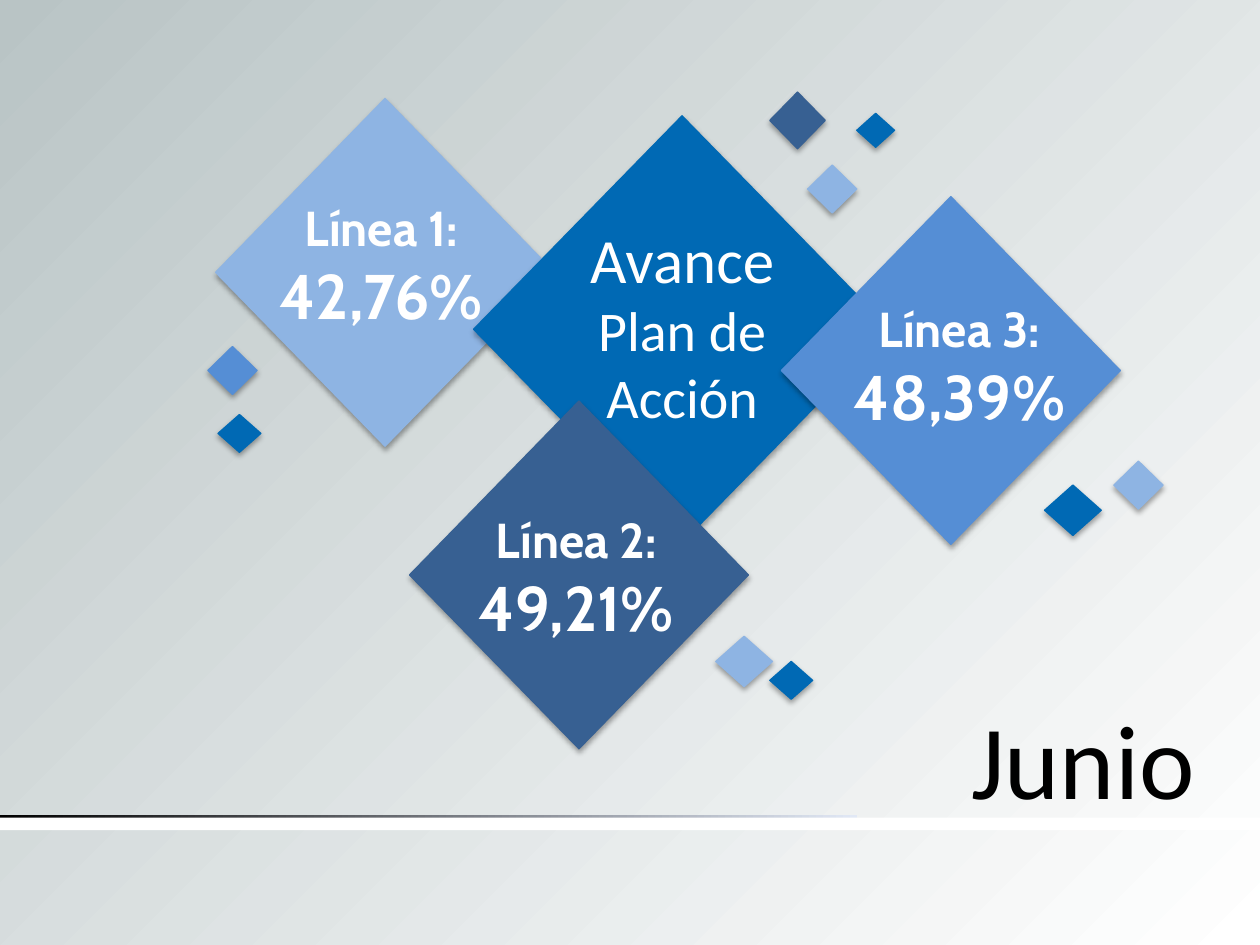
from dataclasses import dataclass

from lxml import etree
from pptx import Presentation
from pptx.dml.color import RGBColor
from pptx.enum.shapes import MSO_SHAPE
from pptx.enum.text import MSO_ANCHOR, MSO_AUTO_SIZE, PP_ALIGN
from pptx.oxml import parse_xml
from pptx.oxml.ns import nsdecls, qn
from pptx.util import Pt

DIAMOND, RECTANGLE = MSO_SHAPE.DIAMOND, MSO_SHAPE.RECTANGLE
CENTER = PP_ALIGN.CENTER
TOP, MIDDLE = MSO_ANCHOR.TOP, MSO_ANCHOR.MIDDLE
NO_FIT = MSO_AUTO_SIZE.NONE
TITLE_ONLY = 5


@dataclass(frozen=True)
class Theme:
    light: str = "8EB4E3"
    medium: str = "558ED5"
    strong: str = "0069B4"
    dark: str = "376092"
    white: str = "FFFFFF"
    black: str = "000000"
    mist: str = "B9C4C5"
    pale: str = "E1E8F5"
    label_font: str = "Cabin"
    text_font: str = "Calibri"
    label_size: int = 28
    value_size: int = 36
    subtitle_size: int = 32
    month_size: int = 60


class SlideBuilder:
    def __init__(self, page, theme):
        self.page = page
        self.theme = theme

    def gradient(self, fill, first, last):
        fill.gradient()
        for stop, color, position in zip(fill.gradient_stops, (first, last), (0, 1)):
            stop.color.rgb = RGBColor.from_string(color)
            stop.position = position

    def background(self, first, last):
        """Radial gradient that spreads from the bottom right corner."""
        self.gradient(self.page.background.fill, first, last)
        gradient = self.page._element.find(".//" + qn("a:gradFill"))
        gradient.replace(gradient.find(qn("a:lin")), parse_xml(
            f'<a:path {nsdecls("a")} path="circle">'
            '<a:fillToRect l="100000" t="100000"/></a:path>'))

    def band(self, left, top, width, height, *colors):
        """Plain strip: one colour fills it flat, two make a gradient."""
        strip = self.page.shapes.add_shape(
            RECTANGLE, Pt(left), Pt(top), Pt(width), Pt(height))
        strip.shadow.inherit = False
        strip.line.fill.background()
        if len(colors) == 2:
            self.gradient(strip.fill, *colors)
            strip.fill.gradient_angle = 0
        else:
            strip.fill.solid()
            strip.fill.fore_color.rgb = RGBColor.from_string(colors[0])

    def diamond(self, left, top, width, height, color):
        shape = self.page.shapes.add_shape(
            DIAMOND, Pt(left), Pt(top), Pt(width), Pt(height))
        shape.fill.solid()
        shape.fill.fore_color.rgb = RGBColor.from_string(color)
        shape.line.color.rgb = RGBColor.from_string(color)
        shape.line.width = Pt(0.75)
        shape.shadow.inherit = False
        effects = shape._element.spPr.find(qn("a:effectLst"))
        shadow = etree.SubElement(
            effects, qn("a:outerShdw"), blurRad=str(Pt(3.1)), dist=str(Pt(1.8)),
            dir="5400000", rotWithShape="0")
        tint = etree.SubElement(shadow, qn("a:srgbClr"), val=self.theme.black)
        etree.SubElement(tint, qn("a:alpha"), val="35000")

    def fill_text(self, box, lines, font, color, bold=False, anchor=MIDDLE, wrap=True):
        frame = box.text_frame
        frame.word_wrap = wrap
        frame.auto_size = NO_FIT
        frame.vertical_anchor = anchor
        for index, (text, size) in enumerate(lines):
            para = frame.add_paragraph() if index else frame.paragraphs[0]
            para.alignment = CENTER
            span = para.add_run()
            span.text = text
            span.font.name = font
            span.font.size = Pt(size)
            span.font.bold = bold
            span.font.color.rgb = RGBColor.from_string(color)

    def text(self, left, top, width, height, lines, font, color, **style):
        box = self.page.shapes.add_textbox(Pt(left), Pt(top), Pt(width), Pt(height))
        self.fill_text(box, lines, font, color, **style)

    def title(self, left, top, width, height, lines):
        """Fill the title placeholder and bring it in front of earlier shapes."""
        box = self.page.shapes.title
        box.left, box.top, box.width, box.height = map(Pt, (left, top, width, height))
        self.fill_text(box, lines, self.theme.text_font, self.theme.white)
        self.page.shapes._spTree.append(box._element)

    def progress(self, diamond, color, label, name, value):
        """Large diamond with its label; label is (left, top, width)."""
        theme = self.theme
        self.diamond(*diamond, 193.7, 198.7, color)
        self.text(*label, 85, [(name, theme.label_size), (value, theme.value_size)],
                  theme.label_font, theme.white, bold=True)


def main():
    deck = Presentation()
    deck.slide_width, deck.slide_height = Pt(720), Pt(540)
    theme = Theme()
    slide = SlideBuilder(deck.slides.add_slide(deck.slide_layouts[TITLE_ONLY]), theme)

    slide.background(theme.white, theme.mist)
    slide.band(0, 466, 490, 3.6, theme.black, theme.pale)
    slide.band(0, 467.2, 720, 7.2, theme.white)

    slide.progress((123.2, 56.3), theme.light, (127.5, 108.7, 180.7),
                   "Línea 1:", "42,76%")
    slide.diamond(270.6, 66.2, 238.3, 244, theme.strong)
    slide.title(299.5, 121.7, 180.7, 128.2,
                [("Avance", theme.value_size), ("Plan de Acción", theme.subtitle_size)])
    slide.progress((234, 229.2), theme.dark, (239, 287.3, 180.7),
                   "Línea 2:", "49,21%")
    slide.progress((446.5, 112.4), theme.medium, (476.6, 166.3, 143.3),
                   "Línea 3:", "48,39%")

    accents = [
        (461.5, 94.3, 28.1, 27.4, theme.light),
        (118.8, 198, 28.1, 27.4, theme.medium),
        (409, 363.6, 32.4, 28.8, theme.light),
        (596.9, 277.2, 32.4, 28.8, theme.strong),
        (124.6, 236.9, 24.5, 21.6, theme.strong),
        (439.9, 52.6, 31.7, 32.4, theme.dark),
        (489.6, 64.8, 21.6, 19.4, theme.strong),
        (636.5, 263.5, 28.1, 27.4, theme.light),
        (439.9, 378, 24.5, 21.6, theme.strong),
    ]
    for accent in accents:
        slide.diamond(*accent)

    slide.text(547.2, 393.1, 143.3, 80, [("Junio", theme.month_size)],
               theme.text_font, theme.black, anchor=TOP, wrap=False)
    deck.save("out.pptx")


if __name__ == "__main__":
    main()
